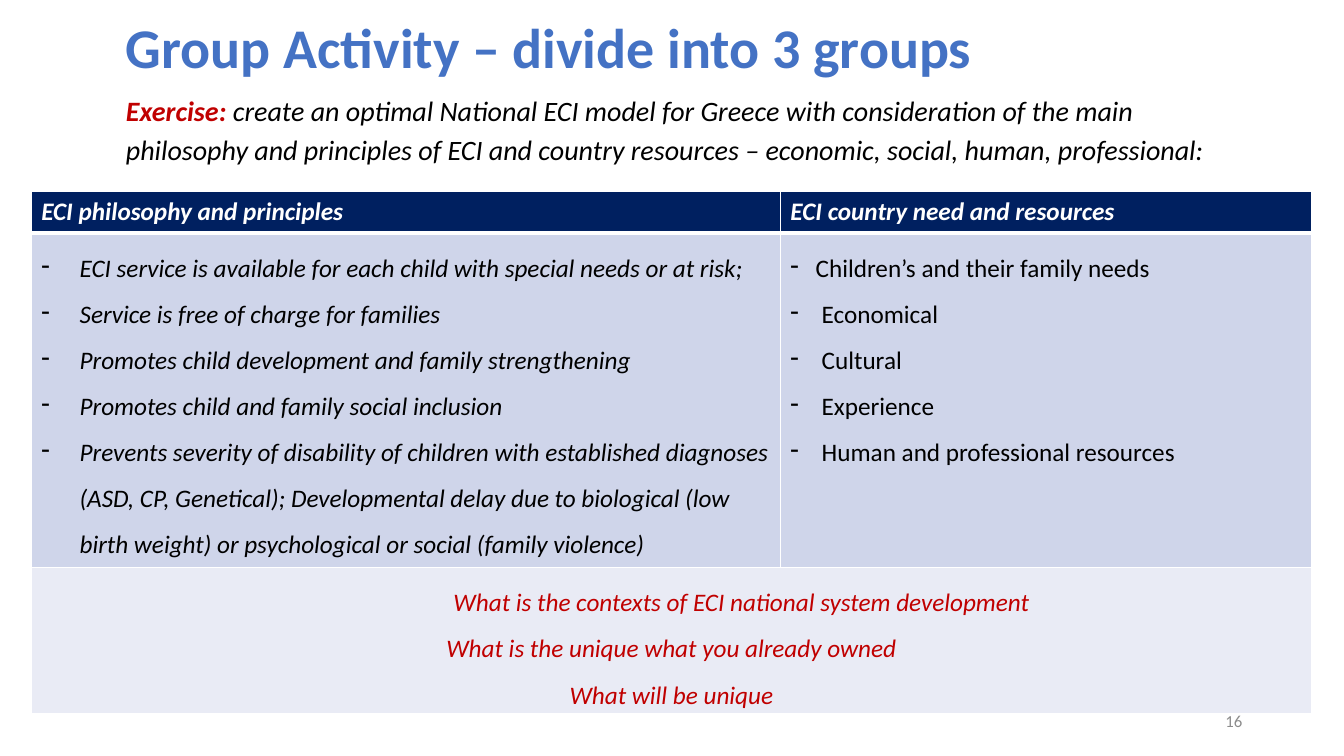
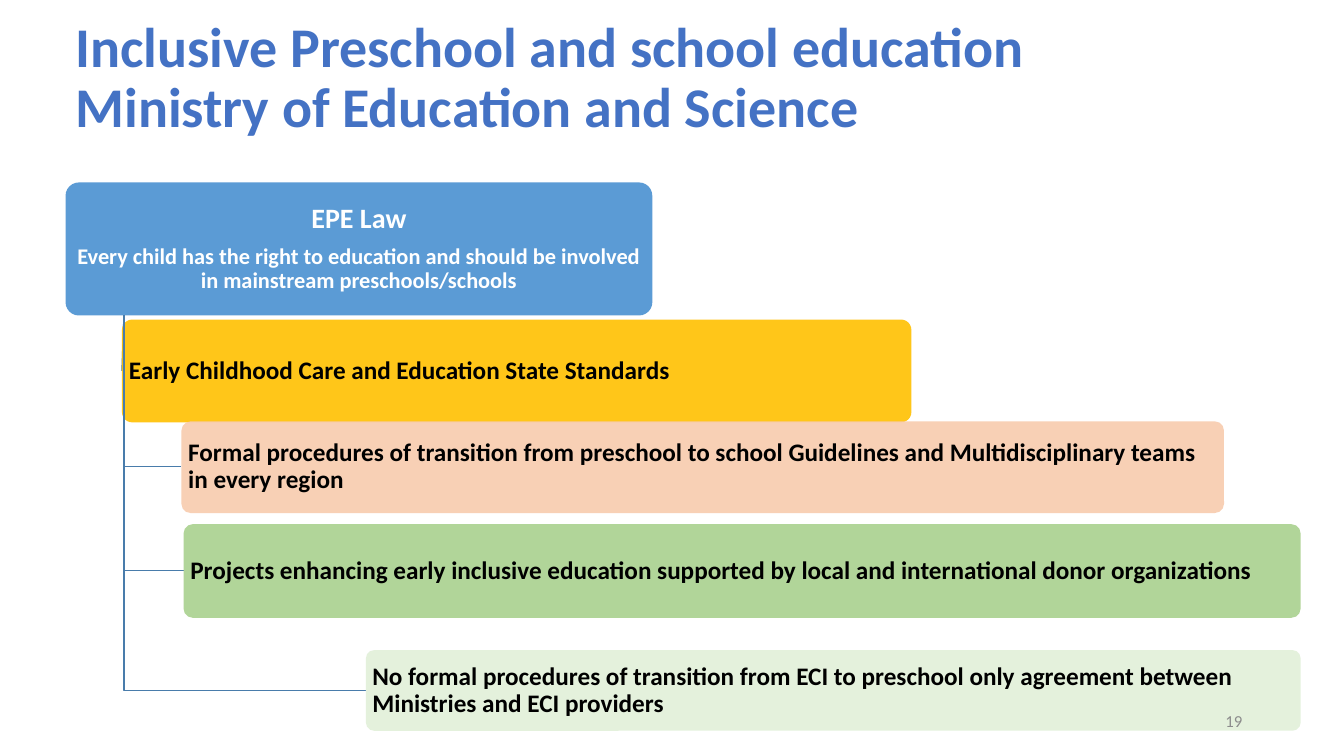
from dataclasses import dataclass

from lxml.etree import SubElement
from pptx import Presentation
from pptx.dml.color import RGBColor
from pptx.enum.shapes import MSO_CONNECTOR, MSO_SHAPE
from pptx.enum.text import MSO_ANCHOR, PP_ALIGN
from pptx.oxml.ns import qn
from pptx.util import Emu, Pt

SCALE = 9144


@dataclass(frozen=True)
class Theme:
    font: str = "Calibri"
    blue: str = "4472C4"
    navy: str = "002060"
    red: str = "C00000"
    black: str = "000000"
    white: str = "FFFFFF"
    gray: str = "8C8C8C"
    body: str = "CFD5EA"
    pale: str = "E9EBF5"
    root: str = "5B9BD5"
    wire: str = "497CAB"
    gold: str = "FFC000"
    peach: str = "F8CBAD"
    green: str = "A9D18E"
    mint: str = "E2F0D9"
    title: int = 40
    lead: int = 20
    text: int = 18
    small: int = 16
    page: int = 12


THEME = Theme()


@dataclass(frozen=True)
class Box:
    x: int
    y: int
    w: int
    h: int

    def inner(self, x, y, w, h):
        return Box(self.x + x, self.y + y, w, h)

    def place(self):
        return [px(n) for n in (self.x, self.y, self.w, self.h)]


def px(n):
    return Emu(n * SCALE)


def paint(shape, color, alpha=100):
    shape.fill.solid()
    shape.fill.fore_color.rgb = RGBColor.from_string(color)
    if alpha < 100:
        tint = shape._element.spPr.find(qn("a:solidFill"))[0]
        SubElement(tint, qn("a:alpha"), val=str(alpha * 1000))


def write(para, text, size, color, bold=False, slant=False):
    run = para.add_run()
    run.text = text
    font = run.font
    font.name, font.size = THEME.font, Pt(size)
    font.bold, font.italic = bold, slant
    font.color.rgb = RGBColor.from_string(color)


def start(frame, line=1.0, align=PP_ALIGN.LEFT):
    first = frame.paragraphs[0]
    para = frame.add_paragraph() if first.runs else first
    para.line_spacing, para.alignment = line, align
    return para


def indent(para, left, hang=0):
    props = para._p.get_or_add_pPr()
    props.set("marL", str(px(left)))
    props.set("indent", str(px(-hang)))
    if hang:
        SubElement(props, qn("a:buChar"), char="-")


def label(slide, box, anchor=MSO_ANCHOR.MIDDLE):
    frame = slide.shapes.add_textbox(*box.place()).text_frame
    frame.word_wrap = True
    frame.vertical_anchor = anchor
    return frame


def head(slide, box, text):
    write(start(label(slide, box), 0.9), text, THEME.title, THEME.blue, bold=True)


def foot(slide, box, number):
    para = start(label(slide, box), align=PP_ALIGN.RIGHT)
    write(para, number, THEME.page, THEME.gray)


def task(slide, box):
    para = start(label(slide, box, MSO_ANCHOR.TOP), 1.15)
    write(para, "Exercise: ", THEME.lead, THEME.red, bold=True, slant=True)
    write(para, "create an optimal National ECI model for Greece with consideration "
          "of the main philosophy and principles of ECI and country resources – "
          "economic, social, human, professional:", THEME.lead, THEME.black, slant=True)


def edge(cell, top, base):
    props = cell._tc.get_or_add_tcPr()
    sides = (("L", 1), ("R", 1), ("T", top), ("B", base))
    for spot, (side, width) in enumerate(sides):
        line = SubElement(props, qn(f"a:ln{side}"), w=str(Pt(width)))
        fill = SubElement(line, qn("a:solidFill"))
        SubElement(fill, qn("a:srgbClr"), val=THEME.white)
        props.insert(spot, line)


HEADS = ("ECI philosophy and principles", "ECI country need and resources")
AIMS = (
    "ECI service is available for each child with special needs or at risk;",
    "Service is free of charge for families",
    "Promotes child development and family strengthening",
    "Promotes child and family social inclusion",
    "Prevents severity of disability of children with established diagnoses "
    "(ASD, CP, Genetical); Developmental delay due to biological (low birth weight) "
    "or psychological or social (family violence)",
)
NEEDS = ("Children’s and their family needs", "Economical", "Cultural",
         "Experience", "Human and professional resources")
ASKS = (("What is the contexts of ECI national system development", 139),
        ("What is the unique what you already owned", 0),
        ("What will be unique", 0))


def grid(slide, box):
    table = slide.shapes.add_table(3, 2, *box.place()).table
    table.first_row = table.horz_banding = False
    left, top, low = 743, 41, 145
    for col, width in zip(table.columns, (left, box.w - left)):
        col.width = px(width)
    for row, height in zip(table.rows, (top, box.h - top - low, low)):
        row.height = px(height)
    table.cell(2, 0).merge(table.cell(2, 1))
    looks = ((THEME.navy, 1, 3), (THEME.body, 3, 1), (THEME.pale, 1, 1))
    for row, (color, roof, base) in enumerate(looks):
        for col in range(2):
            cell = table.cell(row, col)
            paint(cell, color)
            edge(cell, roof, base)
    for col, text in enumerate(HEADS):
        para = start(table.cell(0, col).text_frame)
        write(para, text, THEME.text, THEME.white, bold=True, slant=True)
    lists = ((AIMS, (38,) * 5, True), (NEEDS, (25,) + (31,) * 4, False))
    for col, (items, hangs, slant) in enumerate(lists):
        for text, hang in zip(items, hangs):
            para = start(table.cell(1, col).text_frame, 1.5)
            indent(para, hang, hang)
            write(para, text, THEME.text, THEME.black, slant=slant)
    for text, shift in ASKS:
        para = start(table.cell(2, 0).text_frame, 1.5, PP_ALIGN.CENTER)
        indent(para, shift)
        write(para, text, THEME.text, THEME.red, slant=True)


def card(slide, box, color, alpha=100):
    shape = slide.shapes.add_shape(MSO_SHAPE.ROUNDED_RECTANGLE, *box.place())
    shape.adjustments[0] = 0.1
    shape.shadow.inherit = False
    paint(shape, color, alpha)
    shape.line.fill.background()
    frame = shape.text_frame
    frame.word_wrap = True
    frame.vertical_anchor = MSO_ANCHOR.MIDDLE
    frame.margin_left = frame.margin_right = px(4)
    frame.margin_top = frame.margin_bottom = px(3)
    return frame


def ink(line):
    line.color.rgb = RGBColor.from_string(THEME.wire)
    line.width = Pt(1)


def branch(slide, x, y, box):
    mid = box.y + box.h // 2
    if box.x < x:
        wire = slide.shapes.add_connector(
            MSO_CONNECTOR.STRAIGHT, px(x), px(y), px(box.x), px(mid))
        ink(wire.line)
        SubElement(wire._element.spPr, qn("a:effectLst"))
        return
    trace = slide.shapes.build_freeform(px(x), px(y))
    trace.add_line_segments([(px(x), px(mid)), (px(box.x), px(mid))], close=False)
    elbow = trace.convert_to_shape()
    elbow.shadow.inherit = False
    elbow.fill.background()
    ink(elbow.line)


LEAVES = (
    ((56, 136, 783, 102), THEME.gold,
     "Early Childhood Care and Education State Standards"),
    ((115, 237, 1034, 91), THEME.peach,
     "Formal procedures of transition from preschool to school Guidelines and "
     "Multidisciplinary teams in every region"),
    ((298, 464, 927, 80), THEME.mint,
     "No formal procedures of transition from ECI to preschool only agreement "
     "between Ministries and ECI providers"),
    ((117, 339, 1108, 93), THEME.green,
     "Projects enhancing early inclusive education supported by local and "
     "international donor organizations"),
)


def tree(slide, box):
    root = box.inner(0, 0, 582, 132)
    frame = card(slide, root, THEME.root)
    write(start(frame, 0.9, PP_ALIGN.CENTER), "EPE Law",
          THEME.lead, THEME.white, bold=True)
    para = start(frame, 0.9, PP_ALIGN.CENTER)
    para.space_before = Pt(7)
    write(para, "Every child has the right to education and should be involved "
          "in mainstream preschools/schools", THEME.small, THEME.white, bold=True)
    for spot, color, text in LEAVES:
        leaf = box.inner(*spot)
        branch(slide, root.x + root.w // 10, root.y + root.h, leaf)
        frame = card(slide, leaf, color, 90)
        write(start(frame, 0.9), text, THEME.text, THEME.black, bold=True)


def main():
    deck = Presentation()
    deck.slide_width, deck.slide_height = px(1333), px(750)
    blank = deck.slide_layouts[6]
    page = Box(942, 695, 300, 40)

    group = deck.slides.add_slide(blank)
    head(group, Box(115, 10, 1063, 79), "Group Activity – divide into 3 groups")
    grid(group, Box(31, 190, 1270, 518))
    task(group, Box(115, 83, 1101, 85))
    foot(group, page, "16")

    school = deck.slides.add_slide(blank)
    head(school, Box(65, 19, 1095, 119),
         "Inclusive Preschool and school education Ministry of Education and Science")
    tree(school, Box(65, 181, 1225, 544))
    foot(school, page, "19")

    deck.save("out.pptx")


if __name__ == "__main__":
    main()
